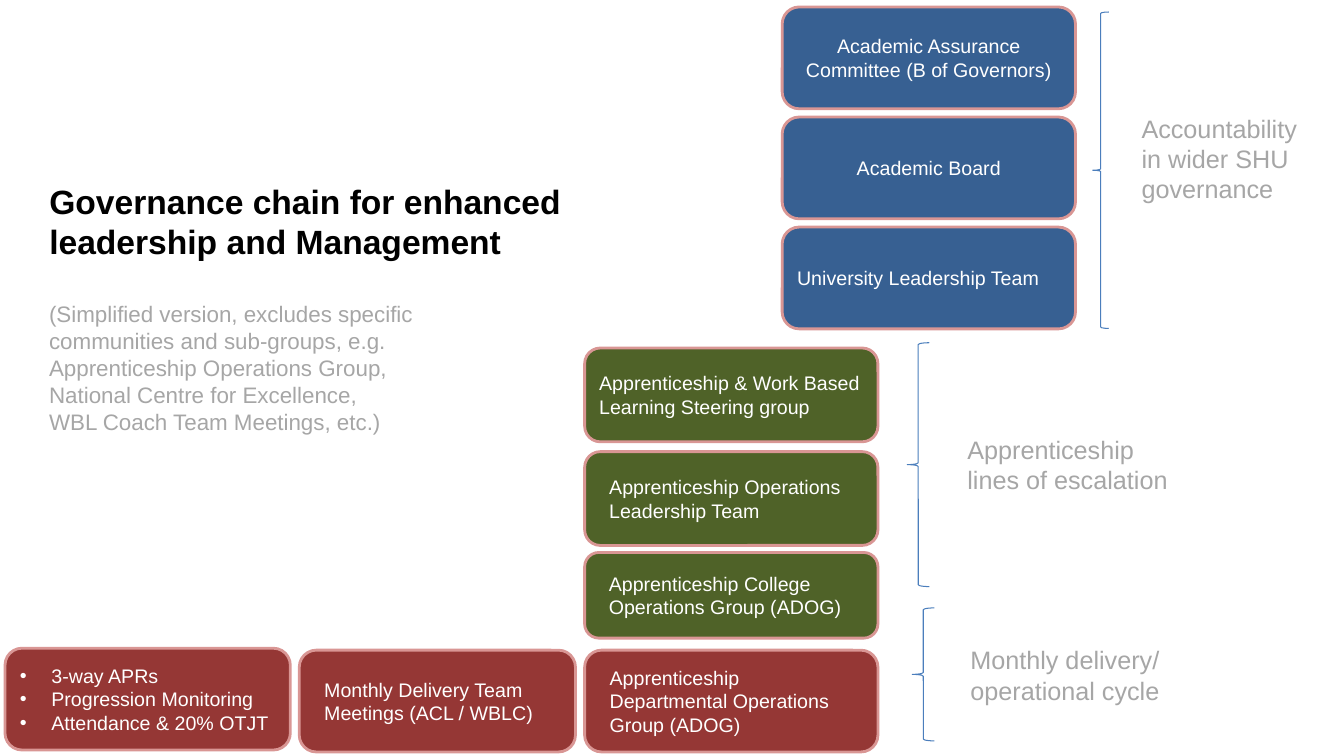
from lxml import etree
from pptx import Presentation
from pptx import util as u
from pptx.dml.color import RGBColor
from pptx.enum import shapes, text
from pptx.oxml.ns import qn

LEFT, CENTER = text.PP_ALIGN.LEFT, text.PP_ALIGN.CENTER
CARD_WIDTH = 209.5


def color(value):
    """Turn a hex string into a colour."""
    return RGBColor.from_string(value)


def indent(para, margin, bullet=False):
    """Indent a paragraph, hanging it behind a bullet on request."""
    settings = para._p.get_or_add_pPr()
    settings.set("marL", str(u.Pt(margin)))
    settings.set("indent", str(-u.Pt(margin) if bullet else 0))
    if bullet:
        etree.SubElement(settings, qn("a:buFont")).set("typeface", "Arial")
        etree.SubElement(settings, qn("a:buChar")).set("char", "•")


def write(frame, lines, size, ink, align=LEFT, bold=False, margin=0, bullet=False):
    """Fill a text frame with equally styled paragraphs."""
    frame.word_wrap = True
    frame.text = "\n".join(lines)
    for para in frame.paragraphs:
        para.alignment = align
        if margin:
            indent(para, margin, bullet)
        para.font.name = "Arial"
        para.font.size = u.Pt(size)
        para.font.bold = bold
        para.font.color.rgb = color(ink)


def outline_shape(page, kind, box, fill=None, line=None, weight=1):
    """Add a preset shape with an optional fill and outline."""
    shape = page.shapes.add_shape(kind, *map(u.Pt, box))
    shape.shadow.inherit = False
    if fill:
        shape.fill.solid()
        shape.fill.fore_color.rgb = color(fill)
    else:
        shape.fill.background()
    if line:
        shape.line.color.rgb = color(line)
        shape.line.width = u.Pt(weight)
    else:
        shape.line.fill.background()
    return shape


def rounded_text(page, box, lines, size, ink, fill=None, line=None, **style):
    """Add a rounded box with vertically centred text."""
    shape = outline_shape(page, shapes.MSO_SHAPE.ROUNDED_RECTANGLE, box, fill, line, 2)
    shape.text_frame.vertical_anchor = text.MSO_ANCHOR.MIDDLE
    write(shape.text_frame, lines, size, ink, **style)


def heading(page, box):
    """Place the title and the grey note below it."""
    left, top, width, height = box
    title = page.shapes.title
    title.left, title.top, title.width, title.height = map(u.Pt, (left, top, width, 65.5))
    title.text_frame.vertical_anchor = text.MSO_ANCHOR.TOP
    title.text_frame.auto_size = text.MSO_AUTO_SIZE.NONE
    write(title.text_frame, ["Governance chain for enhanced leadership and Management"],
          24, "000000", bold=True)
    note = page.shapes.add_textbox(*map(u.Pt, (left, top + 85.7, 293, height - 85.7)))
    write(note.text_frame, [
        "(Simplified version, excludes specific communities and sub-groups, e.g. "
        "Apprenticeship Operations Group, National Centre for Excellence,",
        "WBL Coach Team Meetings, etc.)"], 16, "A6A6A6")


def tier(page, box, fill, cards, brace, label, lines, align=LEFT):
    """Place one governance tier: its cards, brace and label, offset from the box."""
    left, top = box
    for (across, down, width, height), wording, style in cards:
        rounded_text(page, (left + across, top + down, width, height), wording,
                     14, "FFFFFF", fill, "D99694", **style)
    across, down, width, height = brace
    outline_shape(page, shapes.MSO_SHAPE.LEFT_BRACE,
                  (left + across, top + down, width, height), line="4B7EBC", weight=0.75)
    across, down, width, height = label
    rounded_text(page, (left + across, top + down, width, height), lines,
                 18, "A6A6A6", align=align)


def main():
    """Build and save the governance chain."""
    deck = Presentation()
    deck.slide_width, deck.slide_height = u.Pt(960), u.Pt(540)
    page = deck.slides.add_slide(deck.slide_layouts[5])
    heading(page, (28, 125.3, 394, 190))

    inset = {"margin": 7.2}
    boards = [("Academic Assurance Committee (B of Governors)", CENTER),
              ("Academic Board", CENTER),
              ("University Leadership Team", LEFT)]
    tier(page, (558.7, 5), "376092",
         [((0, 78.6 * row, CARD_WIDTH, 72.7), [name], {"align": align})
          for row, (name, align) in enumerate(boards)],
         (221.8, 3.6, 11.5, 226), (245.5, 65.6, 147, 85),
         ["Accountability in wider SHU governance"])

    tier(page, (417.6, 248.6), "4F6228", [
        ((0, 0, CARD_WIDTH, 67), ["Apprenticeship & Work Based Learning Steering group"], {}),
        ((0, 74, CARD_WIDTH, 67), ["Apprenticeship Operations Leadership Team"], inset),
        ((0, 146, CARD_WIDTH, 61.2), ["Apprenticeship College Operations Group (ADOG)"], inset),
    ], (230.4, -3.8, 15.8, 174.2), (262.8, 47.3, 238.3, 71.3),
        ["Apprenticeship", "lines of escalation"])

    tier(page, (3.6, 463), "953735", [
        ((0, 0, 203.8, 72.7),
         ["3-way APRs", "Progression Monitoring", "Attendance & 20% OTJT"],
         {"margin": 22.5, "bullet": True}),
        ((210.2, 1.4, 197.3, 72.7), ["Monthly Delivery Team Meetings (ACL / WBLC)"], inset),
        ((414, 1.4, CARD_WIDTH, 72.7),
         ["Apprenticeship Departmental Operations Group (ADOG)"], inset),
    ], (648, -28.8, 15.8, 95), (637.9, -16.6, 238.3, 71.3),
        ["Monthly delivery/ operational cycle"], CENTER)
    deck.save("out.pptx")


if __name__ == "__main__":
    main()
